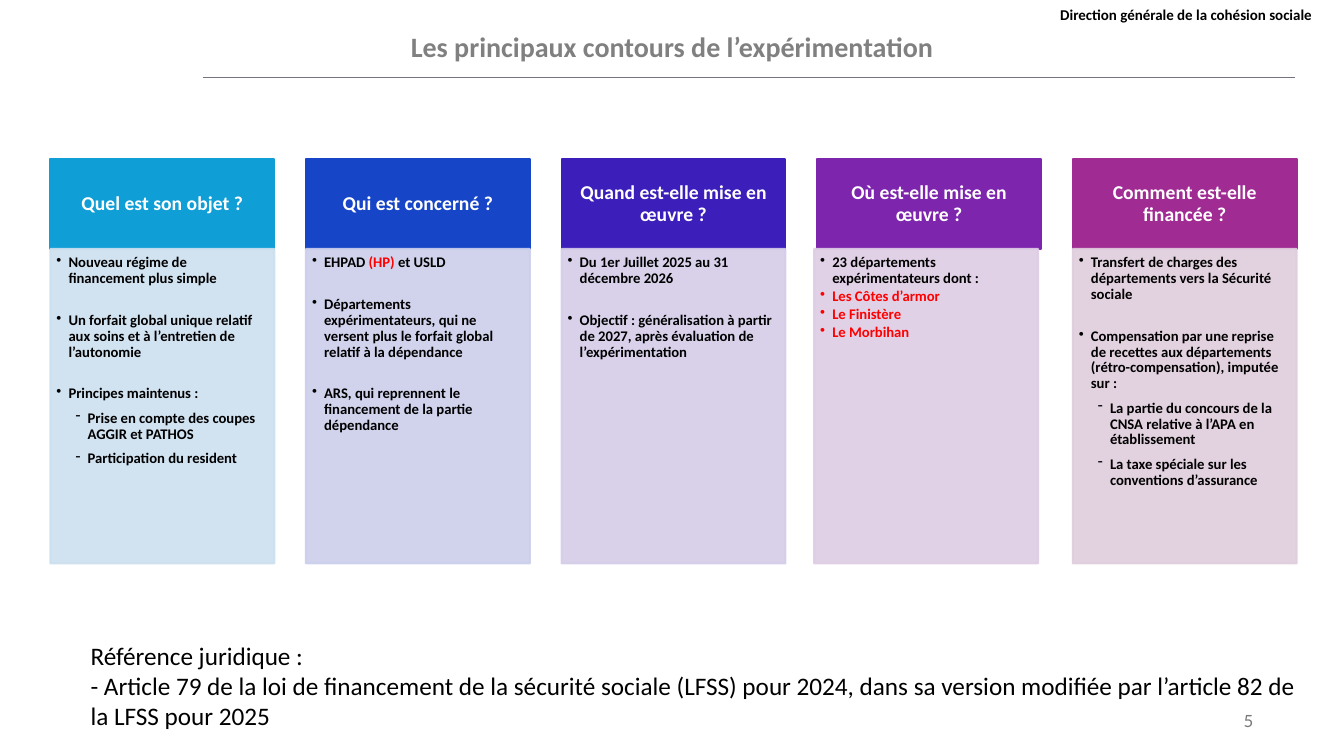
from lxml import etree
from pptx import Presentation
from pptx.dml.color import RGBColor
from pptx.enum.shapes import MSO_CONNECTOR, MSO_SHAPE
from pptx.enum.text import MSO_ANCHOR, PP_ALIGN
from pptx.oxml.ns import qn
from pptx.util import Inches, Pt

LEFT, CENTER, RIGHT = PP_ALIGN.LEFT, PP_ALIGN.CENTER, PP_ALIGN.RIGHT
TOP, MIDDLE = MSO_ANCHOR.TOP, MSO_ANCHOR.MIDDLE
RECTANGLE, STRAIGHT = MSO_SHAPE.RECTANGLE, MSO_CONNECTOR.STRAIGHT

# Column grid, in inches
GRID_LEFT, COLUMN_STEP, COLUMN_WIDTH = 0.5, 2.535, 2.22
HEADER_TOP, HEADER_HEIGHT = 1.58, 0.89
PANEL_TOP, PANEL_HEIGHT = HEADER_TOP + HEADER_HEIGHT, 3.12

BLACK, WHITE, RED = "000000", "FFFFFF", "FF0000"

# Item kinds: bullet, left margin (inches), space before (points)
KINDS = {
    "topic": ("•", 0.12, 18.5),
    "entry": ("•", 0.12, 1.5),
    "detail": ("-", 0.31, 6),
}

# Header, header colour, panel colour, panel shift, items (kind, colour, text pieces)
COLUMNS = [
    ("Quel est son objet ?", "0F9ED5", "CCDFEF", 0, [
        ("topic", BLACK, ["Nouveau régime de financement plus simple"]),
        ("topic", BLACK, ["Un forfait global unique relatif aux soins et à l’entretien de l’autonomie"]),
        ("topic", BLACK, ["Principes maintenus :"]),
        ("detail", BLACK, ["Prise en compte des coupes AGGIR et PATHOS"]),
        ("detail", BLACK, ["Participation du resident"]),
    ]),
    ("Qui est concerné ?", "1745C7", "CCCFEC", 0, [
        ("topic", BLACK, ["EHPAD ", ("(HP) ", RED), "et USLD"]),
        ("topic", BLACK, ["Départements expérimentateurs, qui ne versent plus "
                          "le forfait global relatif à la dépendance"]),
        ("topic", BLACK, ["ARS, qui reprennent le financement de la partie dépendance"]),
    ]),
    ("Quand est-elle mise en œuvre ?", "3C1EBA", "D5CCE8", 0, [
        ("topic", BLACK, ["Du 1er Juillet 2025 au 31 décembre 2026"]),
        ("topic", BLACK, ["Objectif : généralisation à partir de 2027, après évaluation de l’expérimentation"]),
    ]),
    ("Où est-elle mise en œuvre ?", "7D25AD", "DECDE4", -0.03, [
        ("topic", BLACK, ["23 départements expérimentateurs dont :"]),
        ("entry", RED, ["Les Côtes d’armor"]),
        ("entry", RED, ["Le Finistère"]),
        ("entry", RED, ["Le Morbihan"]),
    ]),
    ("Comment est-elle financée ?", "A02B93", "DFCDDC", 0, [
        ("topic", BLACK, ["Transfert de charges des départements vers la Sécurité sociale"]),
        ("topic", BLACK, ["Compensation par une reprise de recettes aux départements "
                          "(rétro-compensation), imputée sur :"]),
        ("detail", BLACK, ["La partie du concours de la CNSA relative à l’APA en établissement"]),
        ("detail", BLACK, ["La taxe spéciale sur les conventions d’assurance"]),
    ]),
]


def rgb(value):
    return RGBColor.from_string(value)


def style(paragraph, size, color, bold=False, align=LEFT, font="Calibri"):
    paragraph.alignment = align
    paragraph.font.name = font
    paragraph.font.size = Pt(size)
    paragraph.font.bold = bold
    paragraph.font.color.rgb = rgb(color)


def set_frame(frame, anchor, insets):
    frame.word_wrap = True
    frame.vertical_anchor = anchor
    (frame.margin_left, frame.margin_top,
     frame.margin_right, frame.margin_bottom) = map(Inches, insets)


def add_text(slide, box, lines, size, color, anchor=TOP, **look):
    frame = slide.shapes.add_textbox(*map(Inches, box)).text_frame
    set_frame(frame, anchor, (0.1, 0.05, 0.1, 0.05))
    frame.text = "\n".join(lines)
    for paragraph in frame.paragraphs:
        style(paragraph, size, color, **look)


def add_block(slide, box, color, opacity=100):
    block = slide.shapes.add_shape(RECTANGLE, *map(Inches, box))
    block.shadow.inherit = False
    block.fill.solid()
    block.fill.fore_color.rgb = rgb(color)
    block.line.color.rgb = rgb(color)
    block.line.width = Pt(1.5)
    if opacity < 100:
        for tint in block._element.spPr.iter(qn("a:srgbClr")):
            etree.SubElement(tint, qn("a:alpha"), val=str(opacity * 1000))
    return block


def add_header(slide, left, label, color):
    box = (left, HEADER_TOP, COLUMN_WIDTH, HEADER_HEIGHT)
    frame = add_block(slide, box, color).text_frame
    set_frame(frame, MIDDLE, (0.11, 0.06, 0.11, 0.06))
    frame.text = label
    frame.paragraphs[0].line_spacing = 0.9
    style(frame.paragraphs[0], 14, WHITE, bold=True, align=CENTER)


def add_item(paragraph, kind, color, pieces, first):
    bullet, margin, space = KINDS[kind]
    properties = paragraph._p.get_or_add_pPr()
    properties.set("marL", str(Inches(margin)))
    properties.set("indent", str(Inches(-0.12)))
    etree.SubElement(properties, qn("a:buChar"), char=bullet)
    paragraph.line_spacing = 0.9
    paragraph.space_before = Pt(0 if first else space)
    style(paragraph, 10.5, color, bold=True)
    for piece in pieces:
        run = paragraph.add_run()
        if isinstance(piece, tuple):
            run.text = piece[0]
            run.font.color.rgb = rgb(piece[1])
        else:
            run.text = piece


def add_panel(slide, left, color, items):
    box = (left, PANEL_TOP, COLUMN_WIDTH, PANEL_HEIGHT)
    frame = add_block(slide, box, color, opacity=90).text_frame
    set_frame(frame, TOP, (0.06, 0.06, 0.09, 0.1))
    for index, (kind, item_color, pieces) in enumerate(items):
        paragraph = frame.add_paragraph() if index else frame.paragraphs[0]
        add_item(paragraph, kind, item_color, pieces, first=index == 0)


def add_rule(slide, start, end, top, color):
    rule = slide.shapes.add_connector(
        STRAIGHT, Inches(start), Inches(top), Inches(end), Inches(top))
    rule.line.color.rgb = rgb(color)
    rule.line.width = Pt(0.75)
    etree.SubElement(rule._element.spPr, qn("a:effectLst"))


def main():
    deck = Presentation()
    deck.slide_width, deck.slide_height = Inches(13.33), Inches(7.5)
    slide = deck.slides.add_slide(deck.slide_layouts[6])

    # Page number, title and rule
    add_text(slide, (11.91, 6.95, 0.62, 0.4), ["5"], 12, "797979",
             anchor=MIDDLE, align=RIGHT, font="Lato")
    add_text(slide, (0.66, 0.02, 12.01, 0.87),
             ["Les principaux contours de l’expérimentation"], 20, "808080",
             anchor=MIDDLE, bold=True, align=CENTER)
    add_rule(slide, 2.01, 12.84, 0.77, "747480")

    # Five question columns
    for index, (label, header_color, panel_color, shift, items) in enumerate(COLUMNS):
        left = GRID_LEFT + index * COLUMN_STEP
        add_header(slide, left, label, header_color)
        add_panel(slide, left + shift, panel_color, items)

    # Department name and legal reference
    add_text(slide, (9.91, 0.01, 3.71, 0.28),
             ["Direction générale de la cohésion sociale"], 10.7, BLACK,
             bold=True, align=CENTER)
    add_text(slide, (0.8, 6.3, 12.19, 1.01),
             ["Référence juridique :",
              "- Article 79 de la loi de financement de la sécurité sociale (LFSS) pour 2024, "
              "dans sa version modifiée par l’article 82 de la LFSS pour 2025"],
             18, BLACK)

    deck.save("out.pptx")


if __name__ == "__main__":
    main()
